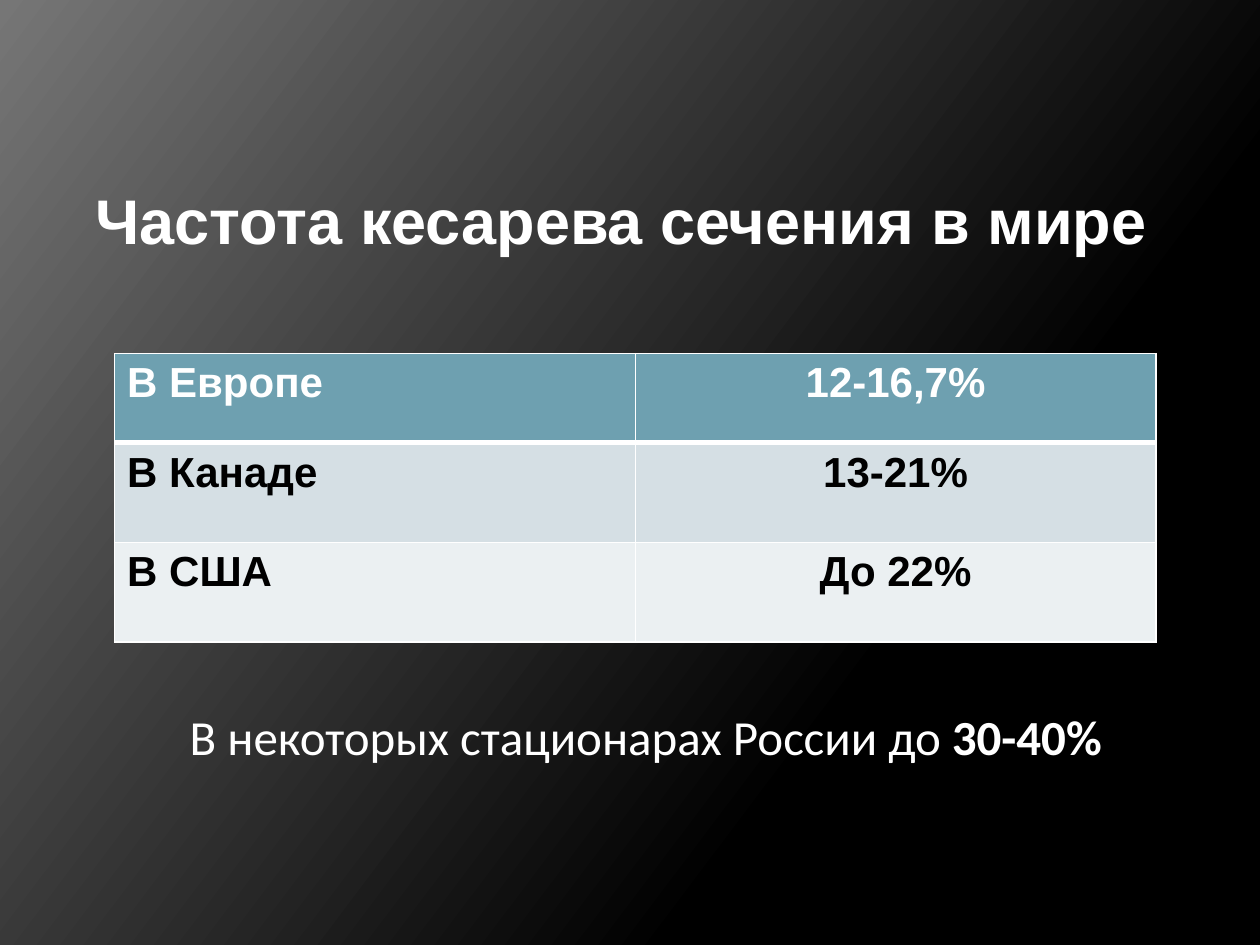
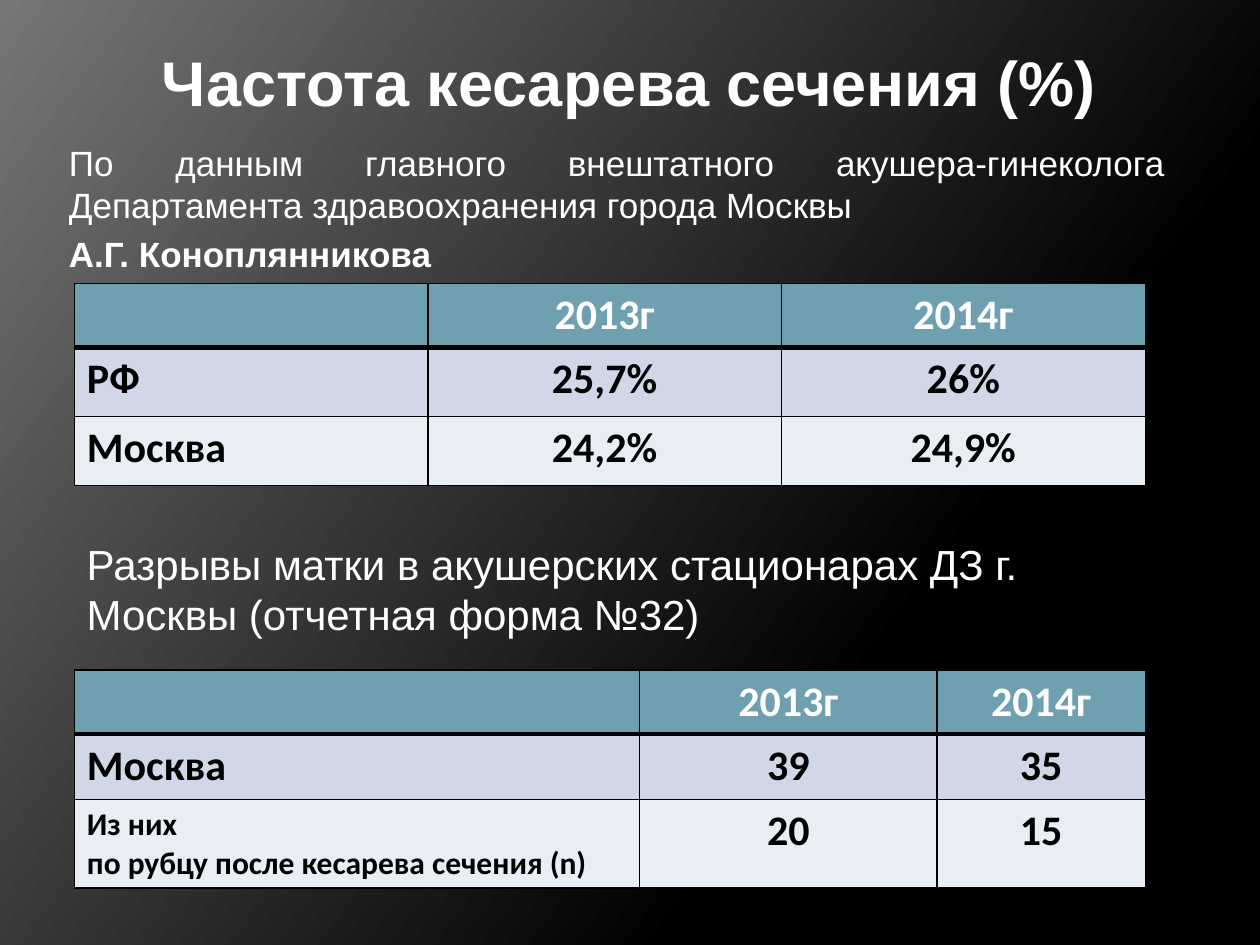
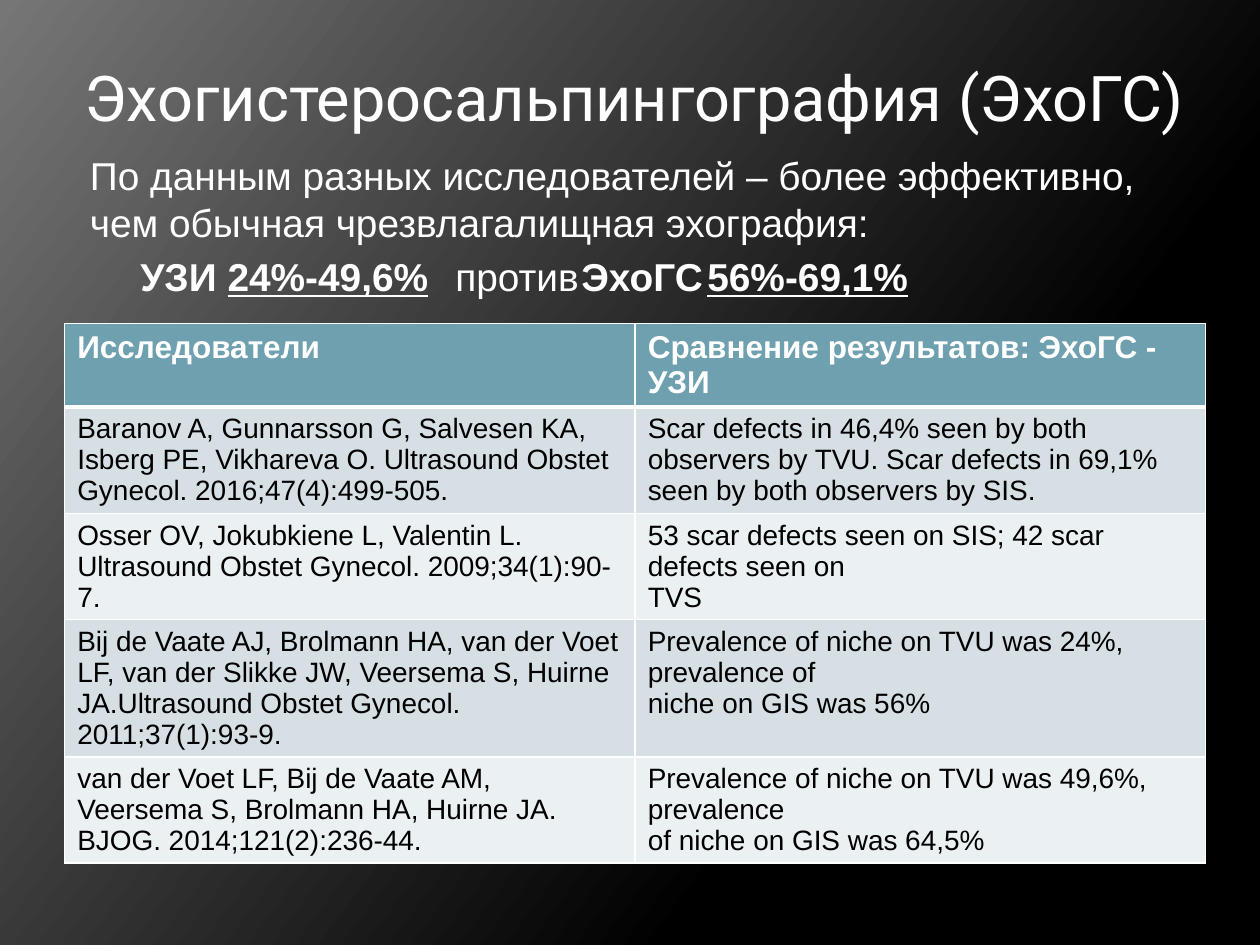
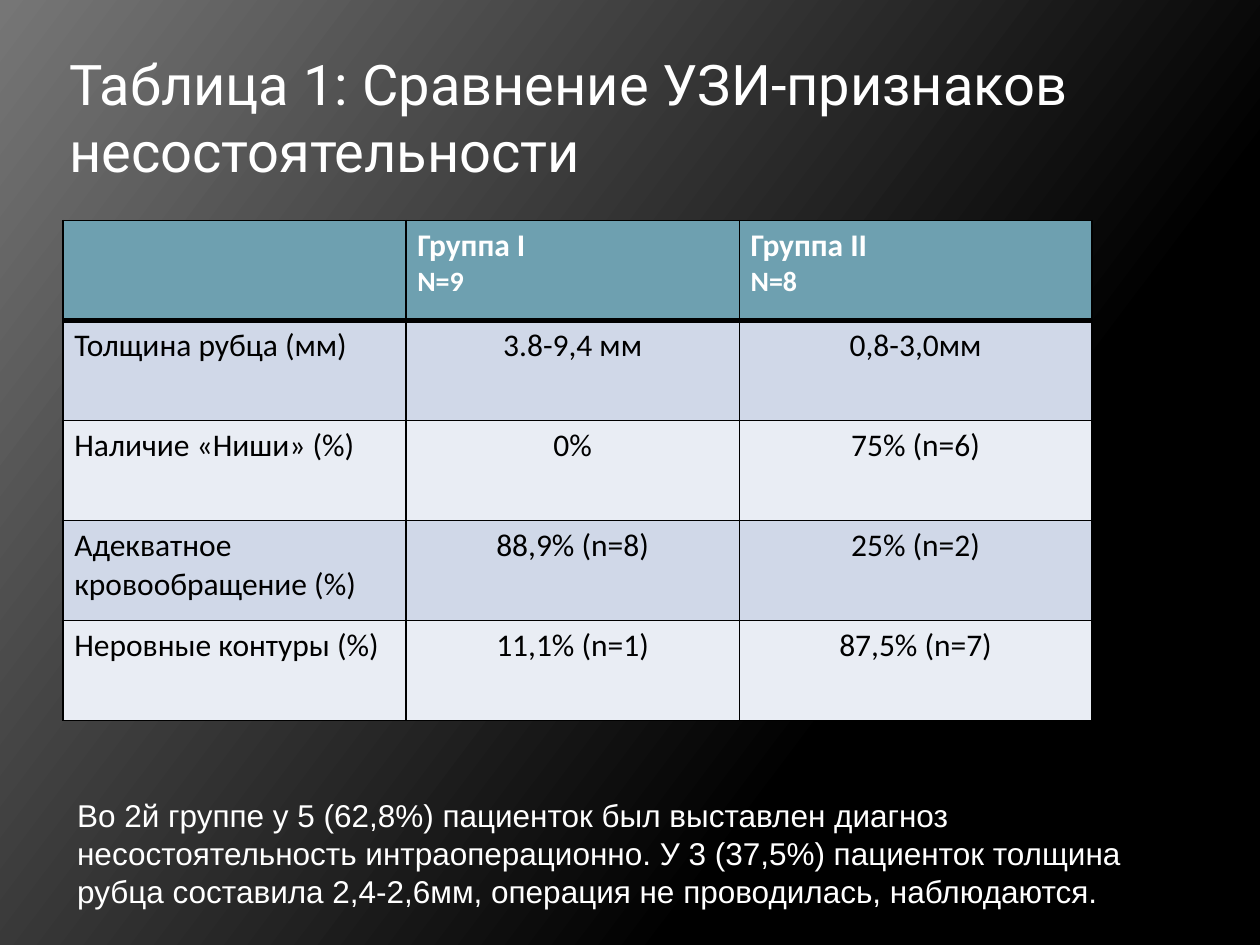
import pptx
import pptx.util
import pptx.dml.color
import pptx.enum.text
import pptx.oxml
import pptx.oxml.ns

Pt = pptx.util.Pt
RGBColor = pptx.dml.color.RGBColor
AL = pptx.enum.text.PP_ALIGN
ANCHOR = pptx.enum.text.MSO_ANCHOR
AUTO = pptx.enum.text.MSO_AUTO_SIZE

# Shared colours and formats
WHITE = RGBColor(0xFF, 0xFF, 0xFF)
BLACK = RGBColor(0x00, 0x00, 0x00)
GREY = RGBColor(0x76, 0x76, 0x76)
TEAL = RGBColor(0x6E, 0xA0, 0xB0)
TEAL_BANDS = (RGBColor(0xD5, 0xDF, 0xE4), RGBColor(0xEB, 0xF0, 0xF2))
BLUE_BANDS = (RGBColor(0xD0, 0xD8, 0xE8), RGBColor(0xE9, 0xED, 0xF4))
BOLD_TITLE = dict(name="Arial", size=Pt(36), bold=True)
NS = pptx.oxml.ns.nsdecls("a", "p")


def write(tf, paras, color=WHITE, align=AL.LEFT, before=0, **fmt):
    """Fill a text frame; a paragraph is a string or a list of (text, format)."""
    tf.word_wrap = True
    for i, para in enumerate(paras):
        p = tf.paragraphs[0] if i == 0 else tf.add_paragraph()
        p.alignment, p.space_before = align, Pt(before)
        for text, extra in [(para, {})] if isinstance(para, str) else para:
            r = p.add_run()
            r.text = text
            r.font.color.rgb = color
            for key, value in {**fmt, **extra}.items():
                setattr(r.font, key, value)


def add_table(s, left, top, widths, heights, rows, aligns, head_aligns,
              head, body, line, bands, margin=7.2):
    """Add a table with a teal header row, two band fills and ruled cells."""
    t = s.shapes.add_table(len(rows), len(widths), Pt(left), Pt(top),
                           Pt(sum(widths)), Pt(sum(heights))).table
    for col, width in zip(t.columns, widths):
        col.width = Pt(width)
    for i, row in enumerate(rows):
        t.rows[i].height = Pt(heights[i])
        for j, text in enumerate(row):
            cell = t.cell(i, j)
            cell.margin_left = cell.margin_right = Pt(margin)
            if text:
                write(cell.text_frame, text.split("\n"), WHITE if i == 0 else BLACK,
                      (aligns if i else head_aligns)[j], **(body if i else head))
            tc_pr = cell._tc.get_or_add_tcPr()
            for side in "LRTB":
                thick = (i, side) in ((0, "B"), (1, "T"))
                tc_pr.append(pptx.oxml.parse_xml(
                    f'<a:ln{side} {NS} w="{Pt(3 if thick else 1)}"><a:solidFill>'
                    f'<a:srgbClr val="{line}"/></a:solidFill></a:ln{side}>'))
            cell.fill.solid()
            cell.fill.fore_color.rgb = TEAL if i == 0 else bands[(i - 1) % 2]
    return t


prs = pptx.Presentation()
prs.slide_width, prs.slide_height = Pt(720), Pt(540)

# Gradient background on the master
c_sld = prs.slide_master.element.cSld
for bg in c_sld.findall(pptx.oxml.ns.qn("p:bg")):
    c_sld.remove(bg)
stops = "".join(f'<a:gs pos="{pos * 1000}"><a:srgbClr val="{color}"/></a:gs>'
                for pos, color in ((0, BLACK), (30, BLACK), (100, GREY)))
c_sld.insert(0, pptx.oxml.parse_xml(
    f'<p:bg {NS}><p:bgPr><a:gradFill><a:gsLst>{stops}</a:gsLst>'
    f'<a:lin ang="{217 * 60000}" scaled="0"/></a:gradFill><a:effectLst/></p:bgPr></p:bg>'))

# Slides with their titles: layout, box, anchor, inset, alignment, text, format
TITLES = [
    (5, (31, 100, 648, 76), ANCHOR.TOP, 7.2, AL.CENTER,
     "Частота кесарева сечения в мире", BOLD_TITLE),
    (1, (70.5, 21, 578, 51), ANCHOR.TOP, 7.2, AL.CENTER,
     "Частота кесарева сечения (%)", BOLD_TITLE),
    (1, (36, 21.6, 653, 67), ANCHOR.MIDDLE, 3.6, AL.CENTER,
     "Эхогистеросальпингография (ЭхоГС)", dict(name="Roboto", size=Pt(36))),
    (5, (36, 21.6, 588, 90), ANCHOR.MIDDLE, 3.6, AL.LEFT,
     "Таблица 1: Сравнение УЗИ-признаков несостоятельности",
     dict(name="Roboto", size=Pt(32))),
]
for layout, box, anchor, inset, align, text, fmt in TITLES:
    s = prs.slides.add_slide(prs.slide_layouts[layout])
    sp = s.shapes.title
    sp.left, sp.top, sp.width, sp.height = map(Pt, box)
    tf = sp.text_frame
    tf.auto_size, tf.vertical_anchor = AUTO.NONE, anchor
    tf.margin_left = tf.margin_right = Pt(inset)
    write(tf, [text], align=align, **fmt)
world, moscow, echo, signs = prs.slides

# Body lists: slide, box, alignment, size, paragraphs
BODIES = [
    (moscow, (25, 77, 648, 85), AL.JUSTIFY, 20, [
        "По данным главного внештатного акушера-гинеколога "
        "Департамента здравоохранения города Москвы",
        [("А.Г. Коноплянникова", dict(bold=True))]]),
    (echo, (37, 83, 648, 102), AL.LEFT, 22.2, [
        "По данным разных исследователей – более эффективно, "
        "чем обычная чрезвлагалищная эхография:",
        [("\tУЗИ ", dict(bold=True)),
         ("24%-49,6%", dict(bold=True, underline=True)),
         ("\tпротив", {}),
         ("\tЭхоГС", dict(bold=True)),
         ("\t", {}),
         ("56%-69,1%", dict(bold=True, underline=True))]]),
]
for s, box, align, size, paras in BODIES:
    sp = s.placeholders[1]
    sp.left, sp.top, sp.width, sp.height = map(Pt, box)
    sp.text_frame.auto_size = AUTO.NONE
    write(sp.text_frame, paras, align=align, before=size / 5, name="Arial", size=Pt(size))
    for p in sp.text_frame.paragraphs:
        p_pr = p._p.get_or_add_pPr()
        p_pr.set("marL", str(Pt(7.2)))
        p_pr.set("indent", "0")
        p_pr.append(pptx.oxml.parse_xml(f"<a:buNone {NS}/>"))

# Tab stops align the comparison line
p_pr.set("marL", "0")
tabs = "".join(f'<a:tab pos="{Pt(x)}" algn="l"/>' for x in (96, 279.5, 368.5, 450.5))
p_pr.append(pptx.oxml.parse_xml(f"<a:tabLst {NS}>{tabs}</a:tabLst>"))

# Text boxes: slide, box, alignment, space before, format, paragraphs
NOTES = [
    (world, (60, 400, 618, 41), AL.CENTER, 0, dict(name="Calibri", size=Pt(28)),
     [[("В некоторых стационарах России до ", {}), ("30-40%", dict(bold=True))]]),
    (moscow, (42.5, 304, 618, 65), AL.LEFT, 4.8, dict(name="Arial", size=Pt(24)),
     ["Разрывы матки в акушерских стационарах ДЗ г. Москвы (отчетная форма №32)"]),
    (signs, (37, 451.5, 647, 72), AL.LEFT, 9, dict(name="Arial", size=Pt(18)),
     ["Во 2й группе у 5 (62,8%) пациенток был выставлен диагноз несостоятельность "
      "интраоперационно. У 3 (37,5%) пациенток толщина рубца составила 2,4-2,6мм, "
      "операция не проводилась, наблюдаются."]),
]
for s, box, align, before, fmt, paras in NOTES:
    tf = s.shapes.add_textbox(*map(Pt, box)).text_frame
    tf.auto_size = AUTO.SHAPE_TO_FIT_TEXT
    write(tf, paras, align=align, before=before, **fmt)

# Slide 1: rates by region
LEFT_CENTER = (AL.LEFT, AL.CENTER, AL.CENTER)
arial_24 = dict(name="Arial", size=Pt(24), bold=True)
add_table(world, 65.5, 202, (297.5, 297.5), (51, 57, 57),
          [("В Европе", "12-16,7%"), ("В Канаде", "13-21%"), ("В США", "До 22%")],
          LEFT_CENTER, LEFT_CENTER, arial_24, arial_24, WHITE, TEAL_BANDS)

# Slide 2: rates and ruptures by year
calibri_24 = dict(name="Calibri", size=Pt(24), bold=True)
years = ("", "2013г", "2014г")
for top, widths, heights, rows in (
        (162, (202, 202, 208), (36.5, 39.5, 39.5),
         [("РФ", "25,7%", "26%"), ("Москва", "24,2%", "24,9%")]),
        (383, (323, 170, 119), (36.5, 37.5, 50.5),
         [("Москва", "39", "35"),
          ("Из них\nпо рубцу после кесарева сечения (n)", "20", "15")])):
    t = add_table(moscow, 42.5, top, widths, heights, [years] + rows, LEFT_CENTER,
                  LEFT_CENTER, calibri_24, calibri_24, BLACK, BLUE_BANDS)
for p in t.cell(2, 0).text_frame.paragraphs:
    p.runs[0].font.size = Pt(18)

# Slide 3: studies
ALL_LEFT = (AL.LEFT,) * 3
add_table(echo, 37, 185, (326, 326), (47.5, 61, 60.5, 78.5, 60.5), [
    ("Исследователи", "Сравнение результатов: ЭхоГС - УЗИ"),
    ("Baranov A, Gunnarsson G, Salvesen KA, Isberg PE, Vikhareva O. "
     "Ultrasound Obstet Gynecol. 2016;47(4):499-505.",
     "Scar defects in 46,4% seen by both observers by TVU. "
     "Scar defects in 69,1% seen by both observers by SIS."),
    ("Osser OV, Jokubkiene L, Valentin L. Ultrasound Obstet Gynecol. 2009;34(1):90-7.",
     "53 scar defects seen on SIS; 42 scar defects seen on\nTVS"),
    ("Bij de Vaate AJ, Brolmann HA, van der Voet LF, van der Slikke JW, "
     "Veersema S, Huirne JA.Ultrasound Obstet Gynecol. 2011;37(1):93-9.",
     "Prevalence of niche on TVU was 24%, prevalence of\nniche on GIS was 56%"),
    ("van der Voet LF, Bij de Vaate AM, Veersema S, Brolmann HA, Huirne JA. "
     "BJOG. 2014;121(2):236-44.",
     "Prevalence of niche on TVU was 49,6%, prevalence\nof niche on GIS was 64,5%"),
], ALL_LEFT, ALL_LEFT, dict(name="Arial", size=Pt(18), bold=True),
    dict(name="Arial", size=Pt(16), bold=False), WHITE, TEAL_BANDS)

# Slide 4: ultrasound signs by group
t = add_table(signs, 36, 126, (196, 190.5, 201.5), (57.15,) * 5, [
    ("", "Группа I\nN=9", "Группа II\nN=8"),
    ("Толщина рубца (мм)", "3.8-9,4 мм", "0,8-3,0мм"),
    ("Наличие «Ниши» (%)", "0%", "75% (n=6)"),
    ("Адекватное кровообращение (%)", "88,9% (n=8)", "25% (n=2)"),
    ("Неровные контуры (%)", "11,1% (n=1)", "87,5% (n=7)"),
], LEFT_CENTER, ALL_LEFT, dict(name="Calibri", size=Pt(18), bold=True),
    dict(name="Calibri", size=Pt(18), bold=False), BLACK, BLUE_BANDS, margin=6.5)
for j in (1, 2):
    t.cell(0, j).text_frame.paragraphs[1].runs[0].font.size = Pt(16)

prs.save("out.pptx")
